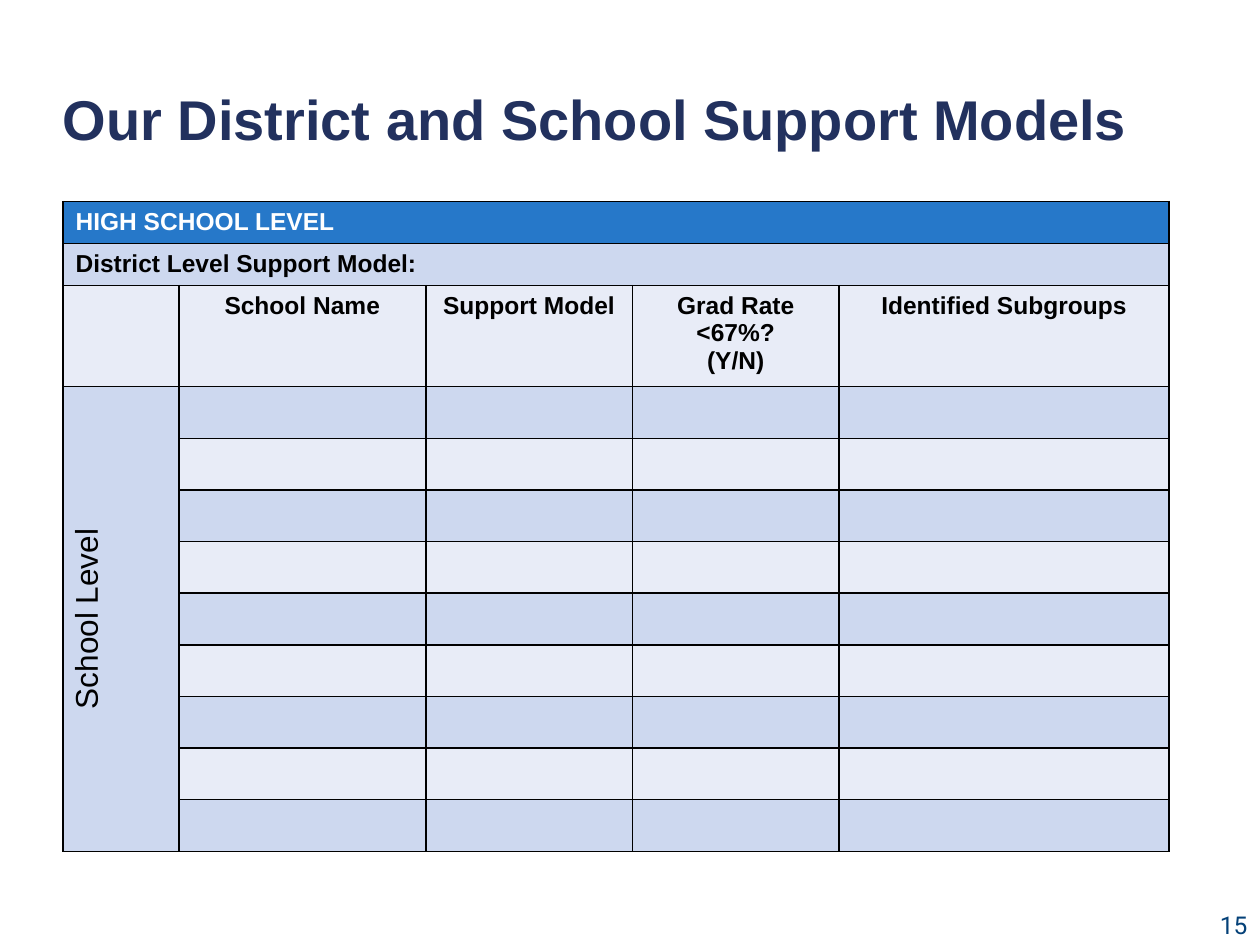
from pptx import Presentation
from pptx.dml.color import RGBColor
from pptx.enum.text import MSO_ANCHOR, PP_ALIGN
from pptx.oxml import parse_xml
from pptx.oxml.ns import nsdecls
from pptx.util import Inches, Pt

NAVY = RGBColor(0x22, 0x31, 0x5E)
PAGE_BLUE = RGBColor(0x04, 0x41, 0x78)
HEADER_BLUE = RGBColor(0x26, 0x78, 0xC9)
BAND_DARK = RGBColor(0xCD, 0xD8, 0xEF)
BAND_LIGHT = RGBColor(0xE8, 0xEC, 0xF7)
WHITE = RGBColor(0xFF, 0xFF, 0xFF)
BLACK = RGBColor(0, 0, 0)

COLUMN_WIDTHS = [0.92, 1.96, 1.64, 1.64, 2.62]
SCHOOL_ROWS = 9
ROW_HEIGHTS = [0.33, 0.33, 0.8] + [0.41] * SCHOOL_ROWS
HEADINGS = ["School Name", "Support Model", "Grad Rate <67%?\n(Y/N)", "Identified Subgroups"]


class SlideBuilder:
    """Holds the text style and the current slide."""

    def __init__(self, page, font="Arial"):
        self.page = page
        self.font = font

    def set_text(self, frame, text, size, color, bold=False, align=PP_ALIGN.LEFT, font=None):
        frame.text = text
        for paragraph in frame.paragraphs:
            paragraph.alignment = align
            paragraph.font.name = font or self.font
            paragraph.font.size = Pt(size)
            paragraph.font.bold = bold
            paragraph.font.color.rgb = color

    def text_box(self, left, top, width, height, text, size, color,
                 anchor=MSO_ANCHOR.TOP, **style):
        box = self.page.shapes.add_textbox(
            Inches(left), Inches(top), Inches(width), Inches(height))
        frame = box.text_frame
        frame.word_wrap = True
        frame.vertical_anchor = anchor
        self.set_text(frame, text, size, color, **style)
        return frame

    def table(self, left, top, widths, heights):
        table = self.page.shapes.add_table(
            len(heights), len(widths), Inches(left), Inches(top),
            Inches(sum(widths)), Inches(sum(heights))).table
        for column, width in zip(table.columns, widths):
            column.width = Inches(width)
        for row, height in zip(table.rows, heights):
            row.height = Inches(height)
        return table

    def style_cell(self, cell, fill):
        properties = cell._tc.get_or_add_tcPr()
        for side in ("lnL", "lnR", "lnT", "lnB"):
            properties.append(parse_xml(
                f'<a:{side} {nsdecls("a")} w="{Pt(1)}"><a:solidFill>'
                f'<a:srgbClr val="{BLACK}"/></a:solidFill></a:{side}>'))
        cell.fill.solid()
        cell.fill.fore_color.rgb = fill


def main():
    deck = Presentation()
    deck.slide_width, deck.slide_height = Inches(10), Inches(7.5)
    page = deck.slides.add_slide(deck.slide_layouts[6])
    builder = SlideBuilder(page)

    # Page number and title
    builder.text_box(7.67, 7.17, 2.33, 0.33, "15", 14, PAGE_BLUE,
                     align=PP_ALIGN.RIGHT, font="Roboto")
    title = builder.text_box(0.4, 0.58, 9.26, 0.75, "Our District and School Support Models",
                             32, NAVY, anchor=MSO_ANCHOR.MIDDLE, bold=True)
    title.paragraphs[0].line_spacing = Pt(36)

    # Banded table grid
    table = builder.table(0.5, 1.6, COLUMN_WIDTHS, ROW_HEIGHTS)
    for index in range(len(ROW_HEIGHTS)):
        band = BAND_DARK if index % 2 else BAND_LIGHT
        for column in range(len(COLUMN_WIDTHS)):
            builder.style_cell(table.cell(index, column), band if index else HEADER_BLUE)

    # Full-width header rows
    last_column = len(COLUMN_WIDTHS) - 1
    banners = [("HIGH SCHOOL LEVEL", WHITE), ("District Level Support Model:", BLACK)]
    for index, (text, color) in enumerate(banners):
        cell = table.cell(index, 0)
        cell.merge(table.cell(index, last_column))
        builder.set_text(cell.text_frame, text, 14, color, bold=True)

    # Column headings
    for column, heading in enumerate(HEADINGS, start=1):
        builder.set_text(table.cell(2, column).text_frame, heading, 14, BLACK,
                         bold=True, align=PP_ALIGN.CENTER)

    # Rotated label beside the school rows
    label = table.cell(3, 0)
    label.merge(table.cell(2 + SCHOOL_ROWS, 0))
    label.vertical_anchor = MSO_ANCHOR.MIDDLE
    label._tc.get_or_add_tcPr().set("vert", "vert270")
    builder.set_text(label.text_frame, "School Level", 18, BLACK, align=PP_ALIGN.CENTER)

    deck.save("out.pptx")


if __name__ == "__main__":
    main()
